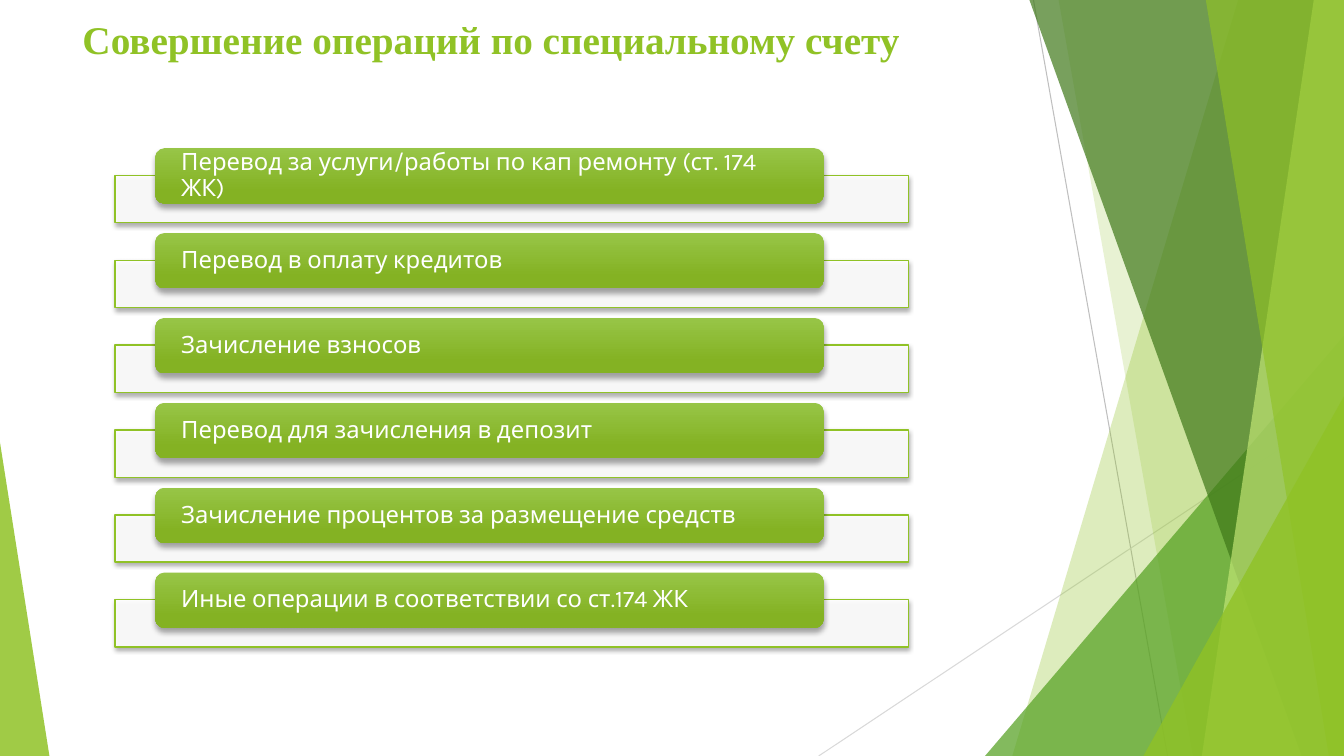
from lxml.etree import SubElement
from pptx import Presentation
from pptx.dml.color import RGBColor
from pptx.enum.shapes import MSO_CONNECTOR, MSO_SHAPE
from pptx.enum.text import MSO_ANCHOR, PP_ALIGN
from pptx.oxml.ns import qn
from pptx.util import Inches, Pt

WIDTH, HEIGHT = 13.33, 7.5
TITLE = "Совершение операций по специальному счету"
OPERATIONS = [
    "Перевод за услуги/работы по кап ремонту (ст. 174 ЖК)",
    "Перевод в оплату кредитов",
    "Зачисление взносов",
    "Перевод для зачисления в депозит",
    "Зачисление процентов за размещение средств",
    "Иные операции в соответствии со ст.174 ЖК",
]
COLORS = {
    "green": "90C226",
    "leaf": "54A021",
    "forest": "3F7819",
    "lime": "C0E474",
    "bar_top": "97C547",
    "bar_bottom": "84B223",
    "white": "FFFFFF",
    "black": "000000",
    "gray": "BFBFBF",
    "light_gray": "D9D9D9",
}
THIN_LINES = [
    ((10.25, 0), (11.58, HEIGHT), "gray"),
    ((WIDTH, 4.03), (8.12, HEIGHT), "light_gray"),
]
# kind, geometry, color, opacity
FACETS = [
    ("band", (12.28, 10.04), "green", 30),
    ("band", (10.5, 11.83), "green", 20),
    ("triangle", (9.77, 3.33, 3.56, 1), "leaf", 72),
    ("band", (10.21, 12.91), "forest", 70),
    ("band", (13.03, 11.92), "lime", 70),
    ("band", (11.96, 13.18), "green", 65),
    ("triangle", (11.34, 3.93, 1.99, 1), "green", 80),
    ("triangle", (0, 4.39, 0.49, 0), "green", 85),
]
FIRST_BAR_TOP, LAST_BAR_TOP = 1.47, 5.68
FRAME_OFFSET = 0.27


def rgb(name):
    return RGBColor.from_string(COLORS[name])


def fill_solid(shape, color, opacity):
    shape.shadow.inherit = False
    shape.fill.solid()
    shape.fill.fore_color.rgb = rgb(color)
    color_element = shape.element.spPr.find(qn("a:solidFill")).find(qn("a:srgbClr"))
    SubElement(color_element, qn("a:alpha"), val=str(opacity * 1000))


def add_shadow(shape, blur, distance):
    shape.shadow.inherit = False
    effects = shape.element.spPr.find(qn("a:effectLst"))
    shadow = SubElement(effects, qn("a:outerShdw"), blurRad=str(Pt(blur)),
                        dist=str(Pt(distance)), dir="5400000", rotWithShape="0")
    color_element = SubElement(shadow, qn("a:srgbClr"), val=COLORS["black"])
    SubElement(color_element, qn("a:alpha"), val="35000")


def add_thin_line(slide, start, end, color):
    connector = slide.shapes.add_connector(
        MSO_CONNECTOR.STRAIGHT, *map(Inches, start + end))
    connector.line.color.rgb = rgb(color)
    connector.line.width = Pt(0.75)
    SubElement(connector.element.spPr, qn("a:effectLst"))


def add_facet(slide, kind, geometry, color, opacity):
    if kind == "band":
        top_x, bottom_x = geometry
        corners = [(top_x, 0), (WIDTH, 0), (WIDTH, HEIGHT), (bottom_x, HEIGHT)]
        points = [(Inches(x), Inches(y)) for x, y in corners]
        builder = slide.shapes.build_freeform(*points[0])
        builder.add_line_segments(points[1:], close=True)
        shape = builder.convert_to_shape()
    else:
        left, top, width, apex = geometry
        shape = slide.shapes.add_shape(
            MSO_SHAPE.ISOSCELES_TRIANGLE,
            *map(Inches, (left, top, width, HEIGHT - top)))
        shape.adjustments[0] = apex
    fill_solid(shape, color, opacity)
    shape.line.fill.background()


def add_title(slide):
    box = slide.shapes.add_textbox(*map(Inches, (0.72, 0.1, 9.4, 0.6)))
    box.text_frame.word_wrap = True
    paragraph = box.text_frame.paragraphs[0]
    paragraph.text = TITLE
    paragraph.font.name = "Times New Roman"
    paragraph.font.size = Pt(28)
    paragraph.font.bold = True
    paragraph.font.color.rgb = rgb("green")


def add_operation(slide, text, top):
    frame = slide.shapes.add_shape(
        MSO_SHAPE.RECTANGLE, *map(Inches, (1.14, top + FRAME_OFFSET, 7.87, 0.47)))
    fill_solid(frame, "white", 90)
    frame.line.color.rgb = rgb("green")
    frame.line.width = Pt(1)
    add_shadow(frame, 3, 2)

    bar = slide.shapes.add_shape(
        MSO_SHAPE.ROUNDED_RECTANGLE, *map(Inches, (1.54, top, 6.63, 0.55)))
    bar.fill.gradient()
    bar.fill.gradient_angle = 270
    stops = [(0, "bar_top"), (0.78, "bar_bottom")]
    for stop, (position, color) in zip(bar.fill.gradient_stops, stops):
        stop.position = position
        stop.color.rgb = rgb(color)
    bar.line.fill.background()
    add_shadow(bar, 4, 3)

    text_frame = bar.text_frame
    text_frame.word_wrap = True
    text_frame.vertical_anchor = MSO_ANCHOR.MIDDLE
    text_frame.margin_left = text_frame.margin_right = Inches(0.23)
    text_frame.margin_top = text_frame.margin_bottom = 0
    paragraph = text_frame.paragraphs[0]
    paragraph.text = text
    paragraph.alignment = PP_ALIGN.LEFT
    paragraph.line_spacing = 0.9
    paragraph.font.name = "Karla"
    paragraph.font.size = Pt(17)
    paragraph.font.color.rgb = rgb("white")


def main():
    presentation = Presentation()
    presentation.slide_width = Inches(WIDTH)
    presentation.slide_height = Inches(HEIGHT)
    slide = presentation.slides.add_slide(presentation.slide_layouts[6])
    for line in THIN_LINES:
        add_thin_line(slide, *line)
    for facet in FACETS:
        add_facet(slide, *facet)
    add_title(slide)
    step = (LAST_BAR_TOP - FIRST_BAR_TOP) / (len(OPERATIONS) - 1)
    for index, text in enumerate(OPERATIONS):
        add_operation(slide, text, FIRST_BAR_TOP + index * step)
    presentation.save("out.pptx")


if __name__ == "__main__":
    main()
